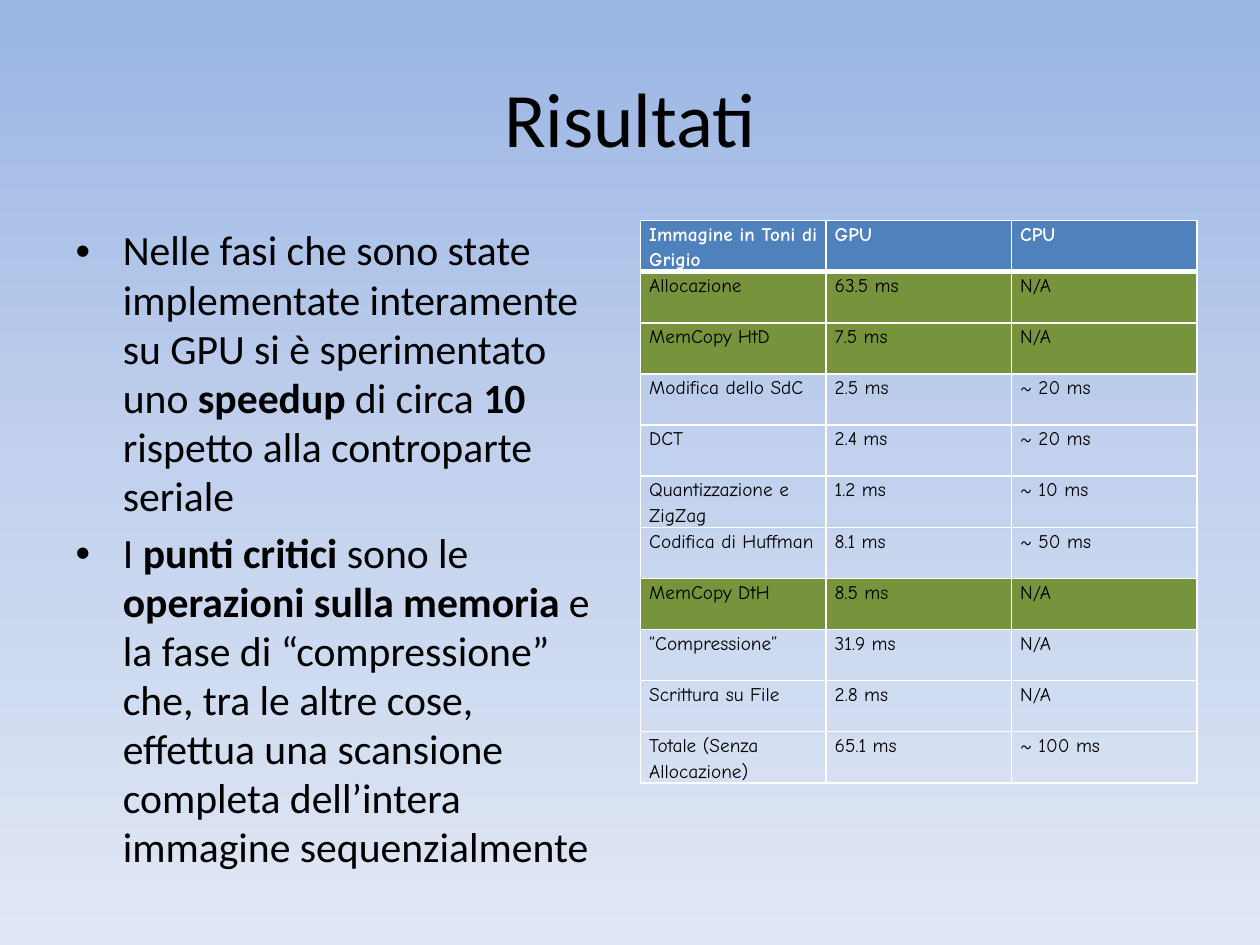
import copy

import pptx
import pptx.dml.color
import pptx.enum.text
import pptx.oxml
import pptx.oxml.ns
import pptx.util

Pt = pptx.util.Pt

BACKGROUND = ["9AB5E4", "C2D1ED", "E1E8F5"]
BLUE, GREEN, WHITE, BLACK = "4F81BD", "77933C", "FFFFFF", "000000"

POINTS = [
    "Nelle fasi che sono state implementate interamente su GPU si è sperimentato uno "
    "**speedup** di circa **10 **rispetto alla controparte seriale",
    "I **punti critici** sono le **operazioni sulla memoria **e la fase di “compressione” "
    "che, tra le altre cose, effettua una scansione completa dell’intera immagine "
    "sequenzialmente",
]
TIMINGS = [
    ("Immagine in Toni di Grigio", "GPU", "CPU"),
    ("Allocazione", "63.5 ms", "N/A"),
    ("MemCopy HtD", "7.5 ms", "N/A"),
    ("Modifica dello SdC", "2.5 ms", "~ 20 ms"),
    ("DCT", "2.4 ms", "~ 20 ms"),
    ("Quantizzazione e ZigZag", "1.2 ms", "~ 10 ms"),
    ("Codifica di Huffman", "8.1 ms", "~ 50 ms"),
    ("MemCopy DtH", "8.5 ms", "N/A"),
    ("“Compressione”", "31.9 ms", "N/A"),
    ("Scrittura su File", "2.8 ms", "N/A"),
    ("Totale (Senza Allocazione)", "65.1 ms", "~ 100 ms"),
]
MEMORY_STEPS = ("Allocazione", "MemCopy HtD", "MemCopy DtH")


def rgb(color):
    return pptx.dml.color.RGBColor.from_string(color)


def set_all(obj, values):
    for name, value in values.items():
        setattr(obj, name, value)


class SlideBuilder:
    title_font = {"name": "Calibri", "size": Pt(44)}
    body_font = {"name": "Calibri", "size": Pt(23.8)}
    table_font = {"name": "Comic Neue", "size": Pt(11)}
    cell_margins = {"margin_left": Pt(5), "margin_right": Pt(5),
                    "margin_top": 0, "margin_bottom": 0}

    def __init__(self, slide):
        self.slide = slide

    def background(self, colors):
        """Fill the slide from top to bottom with evenly spaced colours."""
        fill = self.slide.background.fill
        fill.gradient()
        fill.gradient_angle = 270
        first = next(self.slide.element.iter(pptx.oxml.ns.qn("a:gs")))
        for _ in colors[2:]:
            first.addnext(copy.deepcopy(first))
        for i, (stop, color) in enumerate(zip(fill.gradient_stops, colors)):
            stop.color.rgb = rgb(color)
            stop.position = i / (len(colors) - 1)

    def place(self, sp, left, top, width, height):
        set_all(sp, {"left": Pt(left), "top": Pt(top),
                     "width": Pt(width), "height": Pt(height)})

    def run(self, p, text, font, color=BLACK, bold=False):
        r = p.add_run()
        r.text = text
        set_all(r.font, {**font, "bold": bold})
        r.font.color.rgb = rgb(color)

    def title(self, text, *box):
        sp = self.slide.shapes.title
        self.place(sp, *box)
        p = sp.text_frame.paragraphs[0]
        p.alignment = pptx.enum.text.PP_ALIGN.CENTER
        self.run(p, text, self.title_font)

    def bullets(self, items, *box):
        """Fill the body; text between double asterisks is bold."""
        sp = self.slide.placeholders[1]
        self.place(sp, *box)
        tf = sp.text_frame
        tf.auto_size = pptx.enum.text.MSO_AUTO_SIZE.NONE
        for i, item in enumerate(items):
            p = tf.add_paragraph() if i else tf.paragraphs[0]
            p.line_spacing = 0.98
            for j, part in enumerate(item.split("**")):
                self.run(p, part, self.body_font, bold=j % 2 == 1)

    def borders(self, cell, **widths):
        tc_pr = cell._tc.get_or_add_tcPr()
        for side in "LRTB":
            tc_pr.append(pptx.oxml.parse_xml(
                f'<a:ln{side} {pptx.oxml.ns.nsdecls("a")} w="{Pt(widths.get(side, 1))}">'
                f'<a:solidFill><a:srgbClr val="{WHITE}"/></a:solidFill></a:ln{side}>'))

    def table(self, rows, left, top, col_width, row_height):
        n_rows, n_cols = len(rows), len(rows[0])
        table = self.slide.shapes.add_table(
            n_rows, n_cols, Pt(left), Pt(top),
            Pt(col_width * n_cols), Pt(row_height * n_rows)).table
        table.horz_banding = False
        for i, row in enumerate(rows):
            fill = BLUE if i == 0 else GREEN if row[0] in MEMORY_STEPS else None
            edges = {0: {"B": 3}, 1: {"T": 3}}.get(i, {})
            for j, text in enumerate(row):
                cell = table.cell(i, j)
                set_all(cell, self.cell_margins)
                self.borders(cell, **edges)
                if fill:
                    cell.fill.solid()
                    cell.fill.fore_color.rgb = rgb(fill)
                else:
                    cell.fill.background()
                p = cell.text_frame.paragraphs[0]
                p.line_spacing = 1.15
                self.run(p, text, self.table_font, BLACK if i else WHITE, bold=i == 0)


def main():
    prs = pptx.Presentation()
    set_all(prs, {"slide_width": Pt(720), "slide_height": Pt(540)})
    builder = SlideBuilder(prs.slides.add_slide(prs.slide_layouts[1]))
    builder.background(BACKGROUND)
    builder.title("Risultati", 36, 21.6, 648, 90)
    builder.bullets(POINTS, 36, 126, 318, 356.4)
    builder.table(TIMINGS, 366, 126, 106, 29.2)
    prs.save("out.pptx")


if __name__ == "__main__":
    main()
